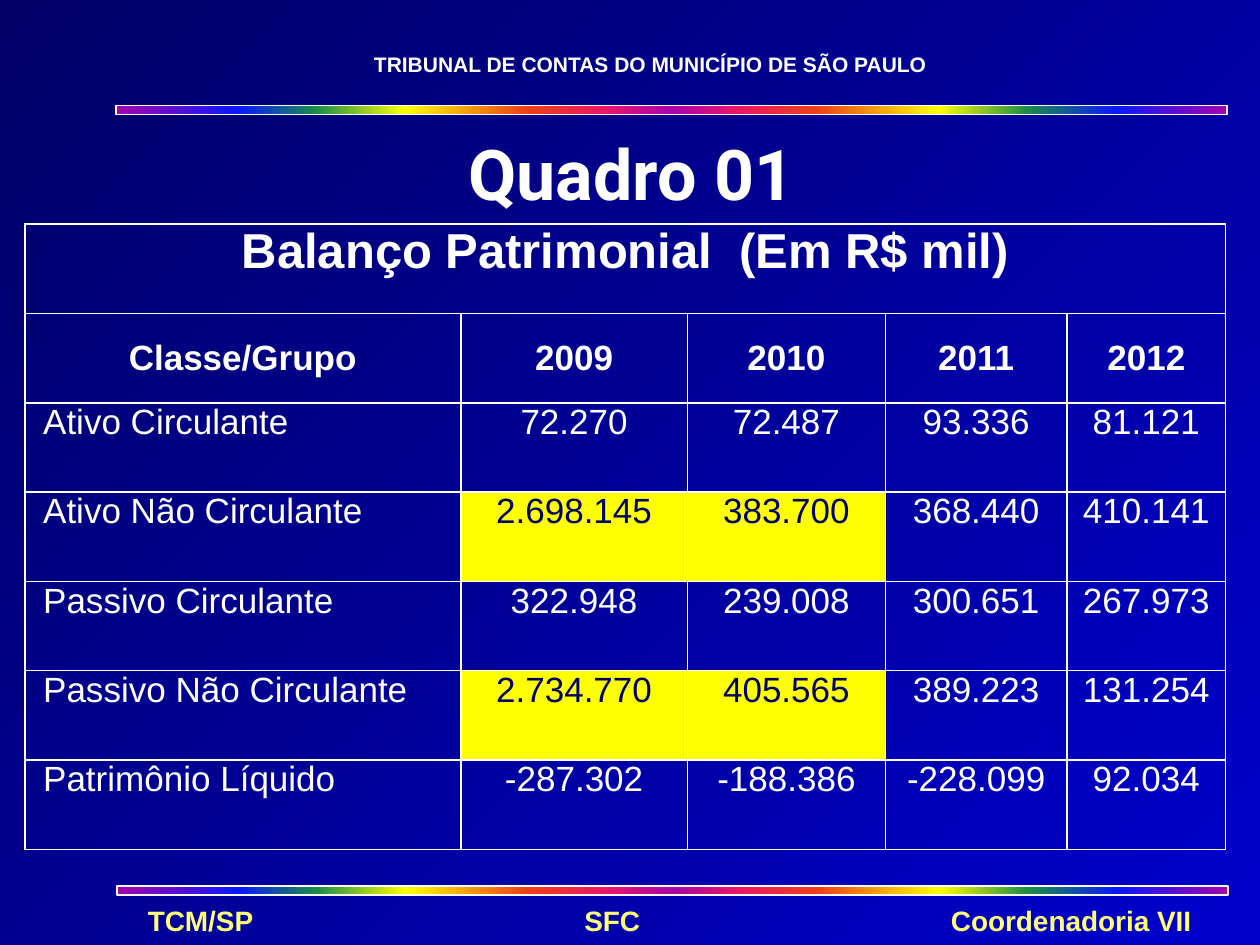
"""Builds the balance sheet slide with its rainbow bars, title and table."""
from copy import deepcopy

from lxml import etree
from pptx import Presentation
from pptx.dml.color import RGBColor
from pptx.enum.shapes import MSO_SHAPE
from pptx.enum.text import MSO_ANCHOR, MSO_AUTO_SIZE, PP_ALIGN
from pptx.oxml.ns import qn
from pptx.util import Cm, Pt

RECT = MSO_SHAPE.RECTANGLE
TOP, MID = MSO_ANCHOR.TOP, MSO_ANCHOR.MIDDLE
LEFT, CENTER = PP_ALIGN.LEFT, PP_ALIGN.CENTER
FIXED = MSO_AUTO_SIZE.NONE

WHITE = RGBColor(0xFF, 0xFF, 0xFF)
NAVY = RGBColor(0x00, 0x00, 0x66)
BLUE = RGBColor(0x00, 0x00, 0xCC)
CREAM = RGBColor(0xFF, 0xFF, 0x78)
YELLOW = RGBColor(0xFF, 0xFF, 0x00)
PURPLE = RGBColor(0xA6, 0x03, 0xAB)
COBALT = RGBColor(0x08, 0x19, 0xFB)
GREEN = RGBColor(0x1A, 0x8D, 0x48)
ORANGE = RGBColor(0xEE, 0x3F, 0x17)
PINK = RGBColor(0xE8, 0x17, 0x66)

HALF = [PURPLE, COBALT, GREEN, YELLOW, ORANGE, PINK]
HUES = HALF + HALF[:1] + HALF[::-1][:-1] + HALF[:1]
SPOTS = [0, 11, 18, 26, 37, 44, 50, 56, 63, 74, 82, 90, 100]

ROWS = [
    ["Classe/Grupo", "2009", "2010", "2011", "2012"],
    ["Ativo Circulante", "72.270", "72.487", "93.336", "81.121"],
    ["Ativo Não Circulante", "2.698.145", "383.700", "368.440", "410.141"],
    ["Passivo Circulante", "322.948", "239.008", "300.651", "267.973"],
    ["Passivo Não Circulante", "2.734.770", "405.565", "389.223", "131.254"],
    ["Patrimônio Líquido", "-287.302", "-188.386", "-228.099", "92.034"],
]
WIDTHS = [8.79, 4.57, 3.99, 3.66, 3.2]
MARKED = {(3, 1), (3, 2), (5, 1), (5, 2)}


def style(item, form):
    for key, val in form.items():
        setattr(item, key, val)


def write(frame, text, size, color, align=LEFT, name="Arial", bold=True):
    para = frame.paragraphs[0]
    para.alignment = align
    run = para.add_run()
    run.text = text
    style(run.font, {"size": Pt(size), "name": name, "bold": bold})
    run.font.color.rgb = color


deck = Presentation()
style(deck, {"slide_width": Cm(25.4), "slide_height": Cm(19.05)})
slide = deck.slides.add_slide(deck.slide_layouts[5])

back = slide.background.fill
back.gradient()
back.gradient_angle = 315
for stop, hue in zip(back.gradient_stops, (NAVY, BLUE)):
    stop.color.rgb = hue

for left, top in ((2.34, 2.13), (2.36, 17.86)):
    bar = slide.shapes.add_shape(RECT, Cm(left), Cm(top), Cm(22.4), Cm(0.18))
    bar.shadow.inherit = False
    bar.line.color.rgb = WHITE
    bar.line.width = Pt(1)
    bar.fill.gradient()
    bar.fill.gradient_angle = 0
    stops = next(bar.element.iter(qn("a:gsLst")))
    for _ in SPOTS[2:]:
        stops.append(deepcopy(stops[0]))
    for stop, hue, spot in zip(bar.fill.gradient_stops, HUES, SPOTS):
        stop.color.rgb = hue
        stop.position = spot / 100

head = slide.shapes.add_textbox(Cm(7.29), Cm(0.91), Cm(15.8), Cm(1.27))
head.text_frame.word_wrap = True
write(head.text_frame, "TRIBUNAL DE CONTAS DO MUNICÍPIO DE SÃO PAULO", 12, WHITE)

foot = slide.shapes.add_textbox(Cm(1.19), Cm(18.08), Cm(24.82), Cm(0.94))
style(foot.text_frame, {"word_wrap": True, "margin_left": Cm(1.79)})
props = foot.text_frame.paragraphs[0]._p.get_or_add_pPr()
tabs = etree.SubElement(props, qn("a:tabLst"))
for spot in (8.8, 16.19):
    etree.SubElement(tabs, qn("a:tab"), pos=str(Cm(spot)), algn="l")
write(foot.text_frame, "TCM/SP\tSFC\tCoordenadoria VII", 16, CREAM)

title = slide.shapes.title
style(title, {"left": Cm(1.3), "top": Cm(0.71), "width": Cm(22.86), "height": Cm(3.18)})
style(title.text_frame, {"auto_size": FIXED, "vertical_anchor": TOP,
                         "margin_top": Cm(1.93), "margin_bottom": 0})
write(title.text_frame, "Quadro 01", 40, WHITE, CENTER, "Roboto")

count = len(ROWS) + 1
frame = slide.shapes.add_table(count, len(WIDTHS), Cm(0.5), Cm(4.52),
                               Cm(sum(WIDTHS)), Cm(1.8 * count))
table = frame.table
style(table, {"first_row": False, "horz_banding": False})
for col, width in zip(table.columns, WIDTHS):
    col.width = Cm(width)
for row in table.rows:
    row.height = Cm(1.8)

for r in range(count):
    for c in range(len(WIDTHS)):
        cell = table.cell(r, c)
        label = r > 1 and c == 0
        style(cell, {"margin_left": Cm(0.37 if label else 0), "margin_right": 0,
                     "margin_top": 0, "margin_bottom": 0,
                     "vertical_anchor": MID if r == 1 else TOP})
        props = cell._tc.get_or_add_tcPr()
        for side in ("lnL", "lnR", "lnT", "lnB"):
            edge = etree.SubElement(props, qn("a:" + side), w=str(Pt(1)))
            paint = etree.SubElement(edge, qn("a:solidFill"))
            etree.SubElement(paint, qn("a:srgbClr"), val=str(WHITE))
        marked = (r, c) in MARKED
        if marked:
            cell.fill.solid()
            cell.fill.fore_color.rgb = YELLOW
        else:
            cell.fill.background()
        if r:
            write(cell.text_frame, ROWS[r - 1][c], 20, NAVY if marked else WHITE,
                  LEFT if label else CENTER, bold=r == 1)

top = table.cell(0, 0)
top.merge(table.cell(0, len(WIDTHS) - 1))
write(top.text_frame, "Balanço Patrimonial  (Em R$ mil)", 28, WHITE, CENTER)

deck.save("out.pptx")
